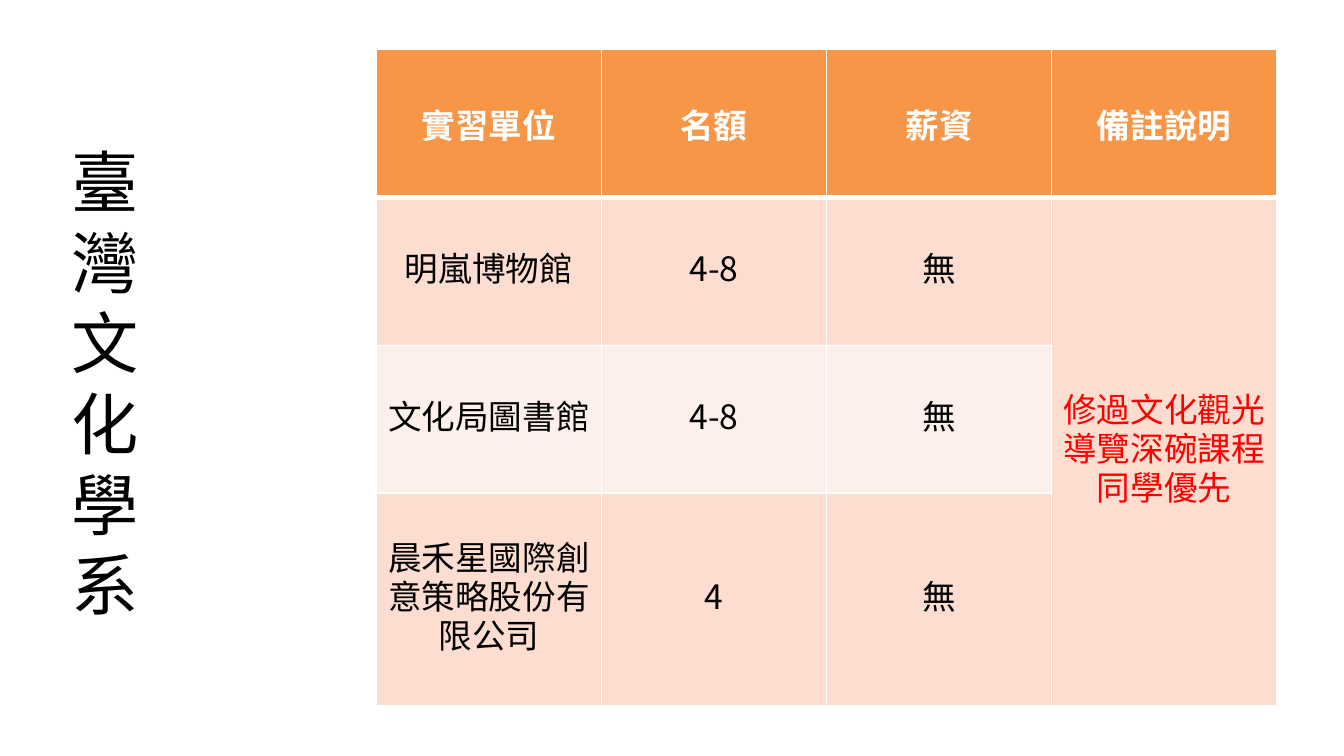
"""Build the internship table slide of the Taiwan culture department."""
from lxml.etree import SubElement
from pptx import Presentation
from pptx.dml.color import RGBColor
from pptx.enum.text import MSO_ANCHOR, MSO_AUTO_SIZE, PP_ALIGN
from pptx.oxml.ns import qn
from pptx.util import Pt

TITLE = "臺灣文化學系"
HEADER = ["實習單位", "名額", "薪資", "備註說明"]
UNITS = [
    ["明嵐博物館", "4-8", "無"],
    ["文化局圖書館", "4-8", "無"],
    ["晨禾星國際創意策略股份有限公司", "4", "無"],
]
NOTE = "修過文化觀光導覽深碗課程同學優先"

WHITE = RGBColor(0xFF, 0xFF, 0xFF)
BLACK = RGBColor(0, 0, 0)
RED = RGBColor(0xFF, 0, 0)
ORANGE = RGBColor(0xF7, 0x96, 0x46)
BANDS = [RGBColor(0xFC, 0xDD, 0xCF), RGBColor(0xFD, 0xEF, 0xE9)]

CJK = "Noto Sans CJK SC"
COL_WIDTH = 120.6
ROW_HEIGHTS = [79.2, 79.2, 79.2, 113.8]


def format_run(r, size, color, latin, bold=False):
    r.font.size, r.font.bold, r.font.name = Pt(size), bold, latin
    r.font.color.rgb = color
    SubElement(r.font._element, qn("a:ea")).set("typeface", CJK)


def add_borders(cell, bottom):
    tc_pr = cell._tc.get_or_add_tcPr()
    for side, width in (("L", 1), ("R", 1), ("T", 1), ("B", bottom)):
        ln = SubElement(tc_pr, qn(f"a:ln{side}"), w=str(Pt(width)))
        fill = SubElement(ln, qn("a:solidFill"))
        SubElement(fill, qn("a:srgbClr"), val=str(WHITE))


def style_cell(cell, fill, bottom=1):
    add_borders(cell, bottom)
    cell.fill.solid()
    cell.fill.fore_color.rgb = fill
    cell.vertical_anchor = MSO_ANCHOR.MIDDLE


def write_cell(cell, text, color, latin=CJK, bold=False):
    p = cell.text_frame.paragraphs[0]
    p.text = text
    p.alignment = PP_ALIGN.CENTER
    format_run(p.runs[0], 18, color, latin, bold)
    if not bold:
        p.line_spacing = Pt(21)
        cell.margin_left = cell.margin_right = Pt(5)
        cell.margin_top = cell.margin_bottom = 0


def add_title(s):
    sp = s.shapes.title
    sp.left, sp.top, sp.width, sp.height = Pt(25.2), Pt(26.6), Pt(62.6), Pt(356.4)
    tf = sp.text_frame
    tf.text = TITLE
    tf.auto_size = MSO_AUTO_SIZE.NONE
    tf.vertical_anchor = MSO_ANCHOR.MIDDLE
    tf._txBody.bodyPr.set("vert", "wordArtVertRtl")
    format_run(tf.paragraphs[0].runs[0], 36, BLACK, "TeX Gyre Bonum")


def add_units_table(s):
    n_rows, n_cols = len(ROW_HEIGHTS), len(HEADER)
    table = s.shapes.add_table(n_rows, n_cols, Pt(201.6), Pt(26.6),
                               Pt(COL_WIDTH * n_cols), Pt(sum(ROW_HEIGHTS))).table
    for col in table.columns:
        col.width = Pt(COL_WIDTH)
    for row, height in zip(table.rows, ROW_HEIGHTS):
        row.height = Pt(height)
    for c, text in enumerate(HEADER):
        style_cell(table.cell(0, c), ORANGE, bottom=3)
        write_cell(table.cell(0, c), text, WHITE, CJK if c == n_cols - 1 else "Calibri", True)
    for i, unit in enumerate(UNITS):
        for c, text in enumerate(unit):
            cell = table.cell(i + 1, c)
            style_cell(cell, BANDS[i % 2])
            write_cell(cell, text, BLACK)
        style_cell(table.cell(i + 1, n_cols - 1), BANDS[0])
    note = table.cell(1, n_cols - 1)
    note.merge(table.cell(n_rows - 1, n_cols - 1))
    write_cell(note, NOTE, RED)


def main():
    prs = Presentation()
    prs.slide_width, prs.slide_height = Pt(720), Pt(405)
    s = prs.slides.add_slide(prs.slide_layouts[5])
    add_title(s)
    add_units_table(s)
    prs.save("out.pptx")


if __name__ == "__main__":
    main()
